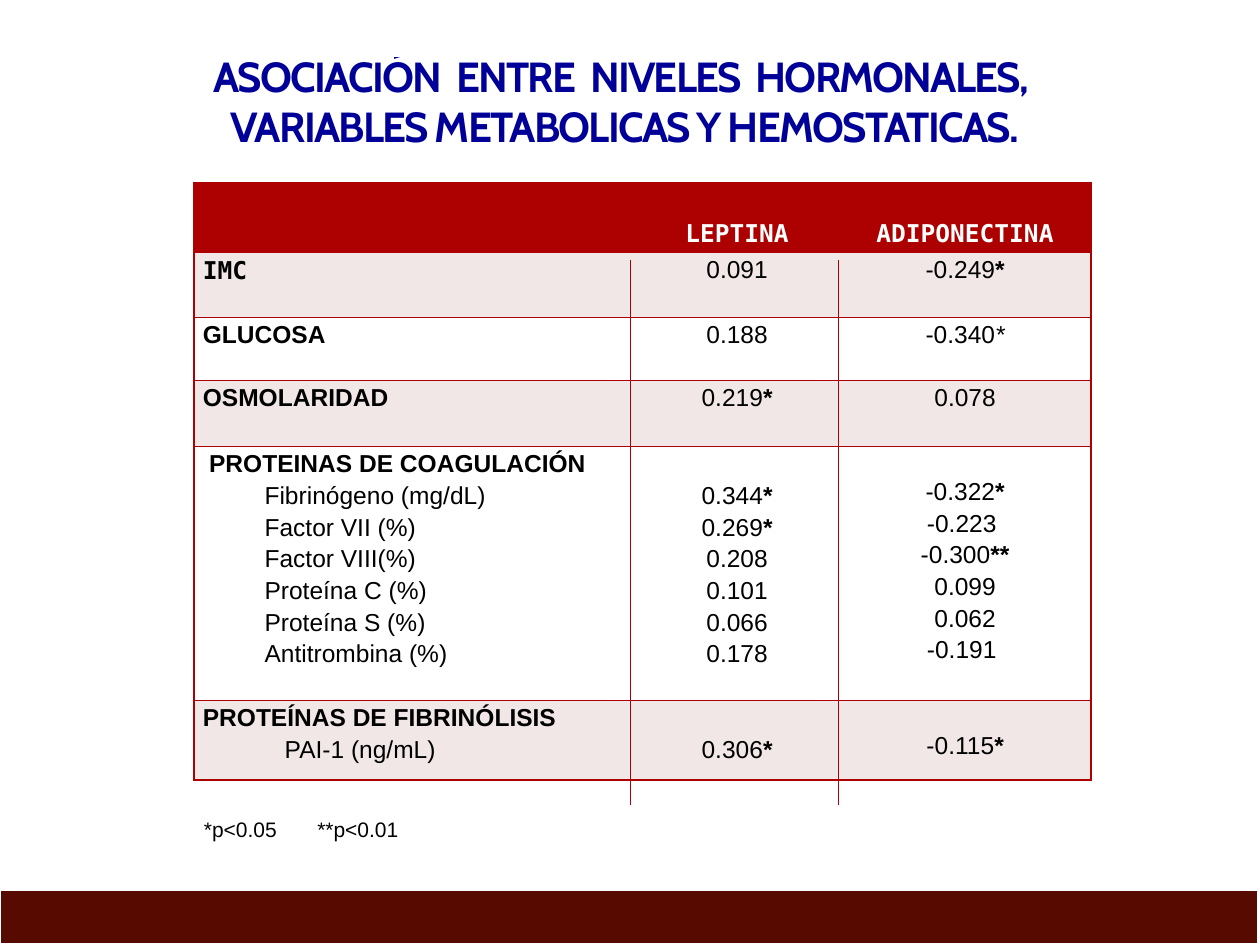
from lxml import etree
from pptx import Presentation
from pptx.dml.color import RGBColor
from pptx.enum.shapes import MSO_CONNECTOR, MSO_SHAPE
from pptx.enum.text import MSO_ANCHOR, PP_ALIGN
from pptx.oxml.ns import qn
from pptx.util import Inches, Pt

LEFT, MID = PP_ALIGN.LEFT, PP_ALIGN.CENTER
RECT, LINE = MSO_SHAPE.RECTANGLE, MSO_CONNECTOR.STRAIGHT
CENTER = MSO_ANCHOR.MIDDLE
RED, DARK, PINK, WHITE, BLACK, NAVY = "AD0101", "560A00", "F1E7E7", "FFFFFF", "000000", "000099"
SANS, MONO, HEAD = "Arial", "DejaVu Sans Mono", "Cabin"
COLS, ROWS = 100, 75
WIDE, HIGH = Inches(10), Inches(7.5)
WIDTHS = [35, 16.2, 20]
HEIGHTS = [5.55, 5.15, 5, 5.25, 20.15, 6.3]

TITLE = ["ASOCIACIÓN  ENTRE  NIVELES  HORMONALES, ", "VARIABLES METABOLICAS Y HEMOSTATICAS."]
BODY = [
    (["IMC"], ["0.091"], ["-0.249*"]),
    (["GLUCOSA"], ["0.188"], ["-0.340*"]),
    (["OSMOLARIDAD"], ["0.219*"], ["0.078"]),
    (["PROTEINAS DE COAGULACIÓN", "Fibrinógeno (mg/dL)", "Factor VII (%)", "Factor VIII(%)",
      "Proteína C (%)", "Proteína S (%)", "Antitrombina (%)"],
     ["0.344*", "0.269*", "0.208", "0.101", "0.066", "0.178"],
     ["-0.322*", "-0.223 ", "-0.300**", "0.099", "0.062", "-0.191 "]),
    (["PROTEÍNAS DE FIBRINÓLISIS", "PAI-1 (ng/mL)"], ["0.306*"], ["-0.115*"]),
]
INDENT = {3: (0.5, 4.9), 4: (0, 6.5)}
DROP = {3: (0, 2.5, 2.2), 4: (0, 2.5, 2.2)}


def tint(code):
    """Turn a hex string into a colour."""
    return RGBColor.from_string(code)


def put(item, form):
    """Set the attributes of an object from a dict."""
    for name, value in form.items():
        setattr(item, name, value)


class Page:
    """Style and current slide, measured on a grid of columns and rows."""

    def __init__(self, deck):
        """Add a title-only slide."""
        self.slide = deck.slides.add_slide(deck.slide_layouts[5])
        self.shapes = self.slide.shapes

    def x(self, col):
        """Length of a number of columns."""
        return round(WIDE * col / COLS)

    def y(self, row):
        """Length of a number of rows."""
        return round(HIGH * row / ROWS)

    def box(self, left, top, wide, high):
        """Place and size on the grid."""
        return self.x(left), self.y(top), self.x(wide), self.y(high)

    def run(self, para, text, size, color=BLACK, face=SANS, **form):
        """Add a formatted run."""
        run = para.add_run()
        run.text = text
        put(run.font, {"size": Pt(size), "name": face, "bold": False, **form})
        run.font.color.rgb = tint(color)
        return run

    def title(self, lines, place):
        """Fill the title placeholder."""
        shape = self.shapes.title
        put(shape, dict(zip(("left", "top", "width", "height"), self.box(*place))))
        frame = shape.text_frame
        put(frame, {"word_wrap": True, "vertical_anchor": CENTER})
        for i, line in enumerate(lines):
            para = frame.add_paragraph() if i else frame.paragraphs[0]
            put(para, {"alignment": MID, "line_spacing": 1.0, "space_before": Pt(0)})
            run = self.run(para, line, 24, NAVY, HEAD, bold=True)
            run.font._element.set("spc", "-100")

    def rect(self, place, fill):
        """Draw a bar with a white outline."""
        bar = self.shapes.add_shape(RECT, *self.box(*place))
        bar.shadow.inherit = False
        bar.fill.solid()
        bar.fill.fore_color.rgb = tint(fill)
        bar.line.color.rgb = tint(WHITE)
        bar.line.width = Pt(2.08)

    def rule(self, col, top, end):
        """Draw a thin vertical line."""
        line = self.shapes.add_connector(LINE, self.x(col), self.y(top), self.x(col), self.y(end))
        line.line.color.rgb = tint(RED)
        line.line.width = Pt(0.25)
        etree.SubElement(line._element.spPr, qn("a:effectLst"))

    def note(self, place, text, stop):
        """Add a small text with one tab stop."""
        frame = self.shapes.add_textbox(*self.box(*place)).text_frame
        frame.word_wrap = True
        para = frame.paragraphs[0]
        para.alignment = LEFT
        tabs = etree.SubElement(para._p.get_or_add_pPr(), qn("a:tabLst"))
        etree.SubElement(tabs, qn("a:tab"), pos=str(self.x(stop)), algn="l")
        self.run(para, text, 12)

    def grid(self, left, top, widths, heights):
        """Add a plain table."""
        place = self.box(left, top, sum(widths), sum(heights))
        table = self.shapes.add_table(len(heights), len(widths), *place).table
        for col, wide in zip(table.columns, widths):
            col.width = self.x(wide)
        for row, high in zip(table.rows, heights):
            row.height = self.y(high)
        return table

    def edges(self, cell, sides):
        """Draw the named cell borders and clear the others."""
        props = cell._tc.get_or_add_tcPr()
        for i, side in enumerate("LRTB"):
            line = etree.Element(qn("a:ln" + side), w=str(Pt(1)))
            if side in sides:
                fill = etree.SubElement(line, qn("a:solidFill"))
                etree.SubElement(fill, qn("a:srgbClr"), val=RED)
            else:
                etree.SubElement(line, qn("a:noFill"))
            props.insert(i, line)

    def cell(self, cell, lines, fill, sides, drop=0, align=MID, indent=(0, 0), star=None, **form):
        """Fill one table cell, with its stars set apart."""
        put(cell, {"margin_left": self.x(0.7), "margin_right": self.x(0.7),
                   "margin_top": self.y(drop), "margin_bottom": 0})
        cell.fill.solid()
        cell.fill.fore_color.rgb = tint(fill)
        self.edges(cell, sides)
        for i, line in enumerate(lines):
            para = cell.text_frame.add_paragraph() if i else cell.text_frame.paragraphs[0]
            put(para, {"alignment": align, "line_spacing": 1.15})
            para._p.get_or_add_pPr().set("marL", str(self.x(indent[min(i, 1)])))
            look = {"size": 14, **form}
            if align == LEFT:
                look["bold"] = i == 0
            value = line.rstrip("*")
            self.run(para, value, **look)
            if value != line:
                self.run(para, line[len(value):], **{**look, **(star or {"bold": True})})


def main():
    """Build the slide."""
    deck = Presentation()
    put(deck, {"slide_width": WIDE, "slide_height": HIGH})
    page = Page(deck)
    page.title(TITLE, (-2, 2.6, 103.2, 10.8))
    page.rect((-0.1, 70.6, 100, 4.4), DARK)
    table = page.grid(15.4, 14.5, WIDTHS, HEIGHTS)
    sides = ["LTB", "TB", "RTB"]
    for j, name in enumerate(["", "LEPTINA", "ADIPONECTINA"]):
        page.cell(table.cell(0, j), [name], RED, sides[j], 2.6, color=WHITE, face=MONO, bold=True)
    for i, row in enumerate(BODY):
        for j, lines in enumerate(row):
            form = {"drop": DROP.get(i, (0, 0, 0))[j]}
            if j == 0:
                form.update(align=LEFT, indent=INDENT.get(i, (0, 0)))
            if lines == ["IMC"]:
                form["face"] = MONO
            if row[0] == ["GLUCOSA"]:
                form["star"] = {"italic": True}
            page.cell(table.cell(i + 1, j), lines, WHITE if i % 2 else PINK, sides[j], **form)
    page.note((15.2, 64.3, 25, 3), "*p<0.05\t**p<0.01", 9)
    page.rect((0, 0, 100, 4.4), WHITE)
    for col in (66.5, 50):
        page.rule(col, 20.6, 63.9)
    deck.save("out.pptx")


if __name__ == "__main__":
    main()
